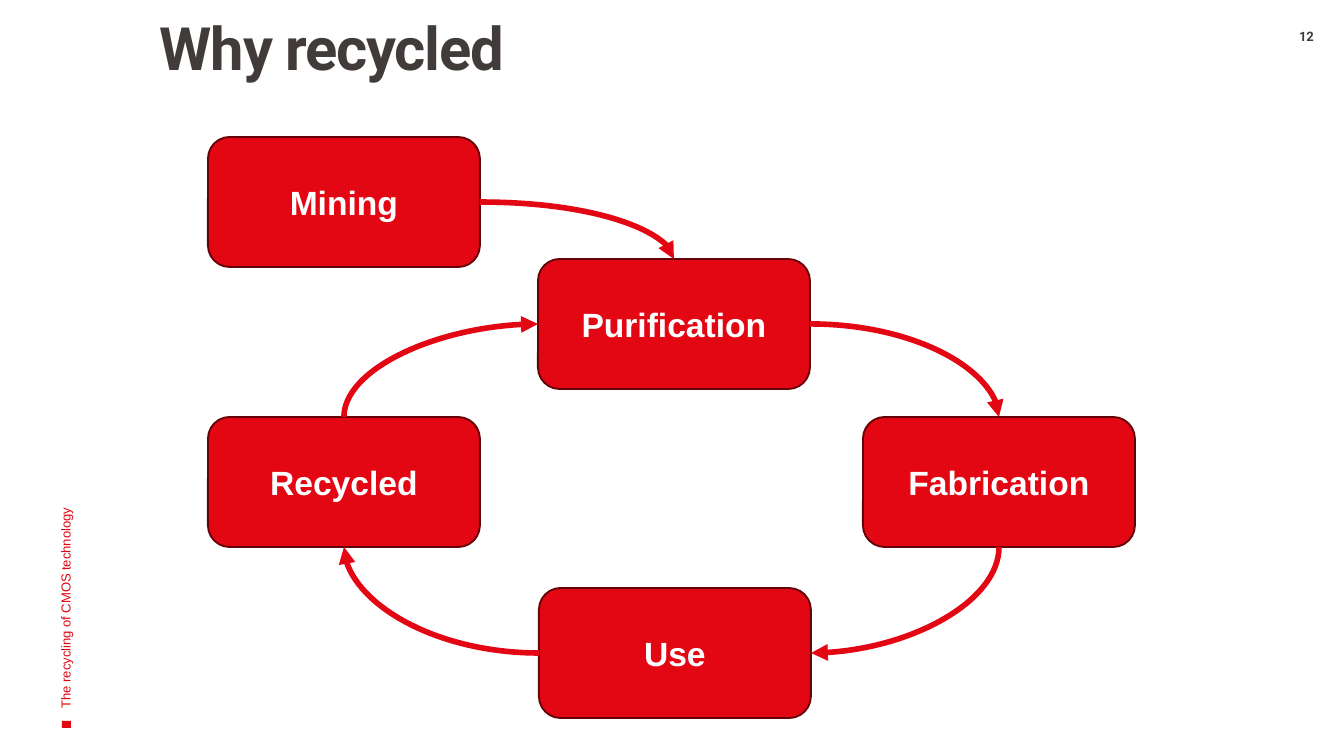
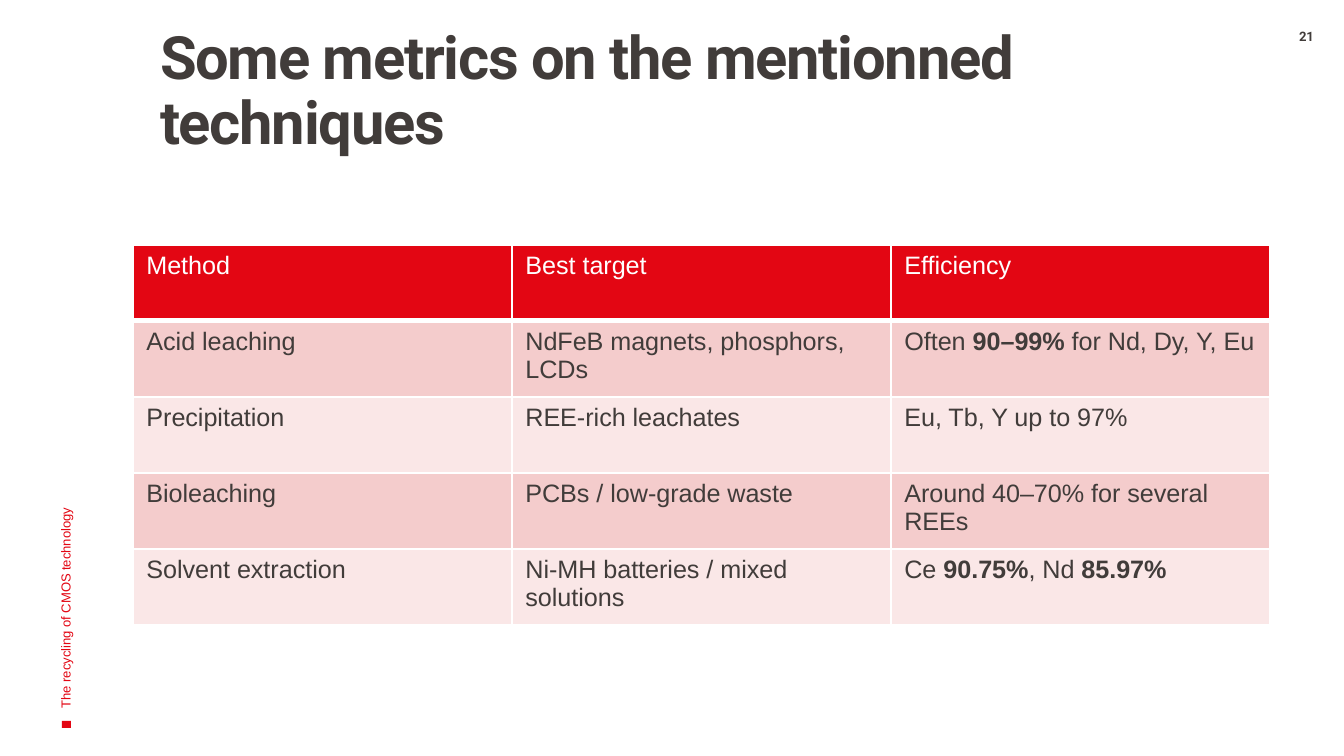
from lxml import etree
from pptx import Presentation
from pptx.dml.color import RGBColor
from pptx.enum.shapes import MSO_CONNECTOR as Connector, MSO_SHAPE as Shape
from pptx.enum.text import MSO_ANCHOR as Anchor, PP_ALIGN as Align
from pptx.oxml.ns import qn
from pptx.util import Emu, Pt

COLORS = {
    "red": "E30613",
    "dark_red": "630308",
    "ink": "413C3A",
    "white": "FFFFFF",
    "band": "F4CCCC",
    "light_band": "FAE7E7",
}
FOOTER = "The recycling of CMOS technology"

CYCLE = {
    "title": "Why recycled",
    "title_box": (133, 19, 539, 157),
    "page": "12",
    "step_size": (272, 130),
    "steps": {
        "Mining": (208, 137),
        "Purification": (538, 259),
        "Fabrication": (863, 417),
        "Use": (539, 588),
        "Recycled": (208, 417),
    },
    "flows": [
        ("Purification", "right", "Fabrication", "top"),
        ("Fabrication", "bottom", "Use", "right"),
        ("Use", "left", "Recycled", "bottom"),
        ("Recycled", "top", "Purification", "left"),
        ("Mining", "right", "Purification", "top"),
    ],
}

METRICS = {
    "title": "Some metrics on the mentionned techniques",
    "title_box": (133, 28, 1071, 149),
    "page": "21",
    "table_box": (133, 245, 1137, 380),
    "rows": [
        ("Method", "Best target", "Efficiency"),
        ("Acid leaching", "NdFeB magnets, phosphors, LCDs", "Often **90–99%** for Nd, Dy, Y, Eu"),
        ("Precipitation", "REE-rich leachates", "Eu, Tb, Y up to 97%"),
        ("Bioleaching", "PCBs / low-grade waste", "Around 40–70% for several REEs"),
        ("Solvent extraction", "Ni-MH batteries / mixed solutions", "Ce **90.75%**, Nd **85.97%**"),
    ],
}

PX_PER_INCH = 134.4
SITES = {"top": (0, 0.5, 0), "left": (1, 0, 0.5), "bottom": (2, 0.5, 1), "right": (3, 1, 0.5)}
TURNS = {"right": 0, "bottom": 90, "left": 180, "top": 270}


def px(length):
    return Emu(round(length * 914400 / PX_PER_INCH))


def rgb(name):
    return RGBColor.from_string(COLORS[name])


def write(frame, text, size, color="ink", font="Arial", bold=False,
          align=Align.LEFT, spacing=None, tracking=None):
    frame.word_wrap = True
    paragraph = frame.paragraphs[0]
    paragraph.alignment = align
    if spacing:
        paragraph.line_spacing = spacing
    for index, part in enumerate(text.split("**")):
        if not part:
            continue
        run = paragraph.add_run()
        run.text = part
        run.font.size = Pt(size)
        run.font.name = font
        run.font.bold = bold or index % 2 == 1
        run.font.color.rgb = rgb(color)
        if tracking:
            run.font._element.set("spc", str(round(tracking * 100)))


def add_label(slide, box, text, margins=(13, 7, 13, 7), anchor=Anchor.TOP, rotation=0, **style):
    label = slide.shapes.add_textbox(*map(px, box))
    label.rotation = rotation
    frame = label.text_frame
    frame.margin_left, frame.margin_top, frame.margin_right, frame.margin_bottom = map(px, margins)
    frame.vertical_anchor = anchor
    write(frame, text, **style)


def add_block(slide, kind, box, outline=None):
    block = slide.shapes.add_shape(kind, *map(px, box))
    block.shadow.inherit = False
    block.fill.solid()
    block.fill.fore_color.rgb = rgb("red")
    if outline:
        block.line.color.rgb = rgb(outline)
        block.line.width = Pt(1)
    else:
        block.line.fill.background()
    return block


def add_page(deck, content):
    slide = deck.slides.add_slide(deck.slide_layouts[6])
    add_block(slide, Shape.RECTANGLE, (62, 721, 9, 7))
    add_label(slide, content["title_box"], content["title"], margins=(27, 0, 11, 7),
              size=32, font="Roboto", bold=True, spacing=0.9, tracking=-0.7)
    add_label(slide, (-180, 409, 491, 134), FOOTER, anchor=Anchor.MIDDLE, rotation=270,
              size=7, color="red")
    add_label(slide, (1269, 28, 75, 24), content["page"], margins=(13, 0, 13, 0),
              size=7, font="Roboto", bold=True, align=Align.CENTER)
    return slide


def site_point(step, side):
    _, across, down = SITES[side]
    return step.left + across * step.width, step.top + down * step.height


def add_flow(slide, source, exit_side, target, entry_side):
    x1, y1 = site_point(source, exit_side)
    x2, y2 = site_point(target, entry_side)
    turn = TURNS[exit_side]
    width, height = abs(x2 - x1), abs(y2 - y1)
    if turn % 180:
        width, height = height, width

    flow = slide.shapes.add_connector(Connector.CURVE, 0, 0, 0, 0)
    flow.begin_connect(source, SITES[exit_side][0])
    flow.end_connect(target, SITES[entry_side][0])
    properties = flow._element.spPr
    properties.find(qn("a:prstGeom")).set("prst", "curvedConnector2")
    frame = properties.find(qn("a:xfrm"))
    frame.attrib.clear()
    frame.set("rot", str(turn * 60000))
    flow.left = Emu(round((x1 + x2 - width) / 2))
    flow.top = Emu(round((y1 + y2 - height) / 2))
    flow.width, flow.height = Emu(round(width)), Emu(round(height))

    flow.line.color.rgb = rgb("red")
    flow.line.width = Pt(3)
    etree.SubElement(properties.find(qn("a:ln")), qn("a:tailEnd"), type="triangle")
    etree.SubElement(properties, qn("a:effectLst"))


def add_cycle(slide, content):
    steps = {}
    for name, corner in content["steps"].items():
        step = add_block(slide, Shape.ROUNDED_RECTANGLE, corner + content["step_size"], "dark_red")
        step.text_frame.vertical_anchor = Anchor.MIDDLE
        write(step.text_frame, name, size=18, color="white", bold=True, align=Align.CENTER)
        steps[name] = step
    for source, exit_side, target, entry_side in content["flows"]:
        add_flow(slide, steps[source], exit_side, steps[target], entry_side)


def set_borders(cell, widths):
    properties = cell._tc.get_or_add_tcPr()
    for side, width in widths.items():
        border = etree.SubElement(properties, qn(f"a:ln{side}"), w=str(Pt(width)))
        fill = etree.SubElement(border, qn("a:solidFill"))
        etree.SubElement(fill, qn("a:srgbClr"), val=COLORS["white"])


def add_metrics(slide, content):
    rows = content["rows"]
    table = slide.shapes.add_table(len(rows), len(rows[0]), *map(px, content["table_box"])).table
    table.first_row = table.horz_banding = False
    for r, row in enumerate(rows):
        background = "red" if r == 0 else "band" if r % 2 else "light_band"
        for c, text in enumerate(row):
            cell = table.cell(r, c)
            set_borders(cell, {"L": 1, "R": 1, "T": 3 if r == 1 else 1, "B": 3 if r == 0 else 1})
            cell.fill.solid()
            cell.fill.fore_color.rgb = rgb(background)
            write(cell.text_frame, text, size=13.5, color="ink" if r else "white")


def main():
    deck = Presentation()
    deck.slide_width, deck.slide_height = px(1344), px(756)
    add_cycle(add_page(deck, CYCLE), CYCLE)
    add_metrics(add_page(deck, METRICS), METRICS)
    deck.save("out.pptx")


if __name__ == "__main__":
    main()
